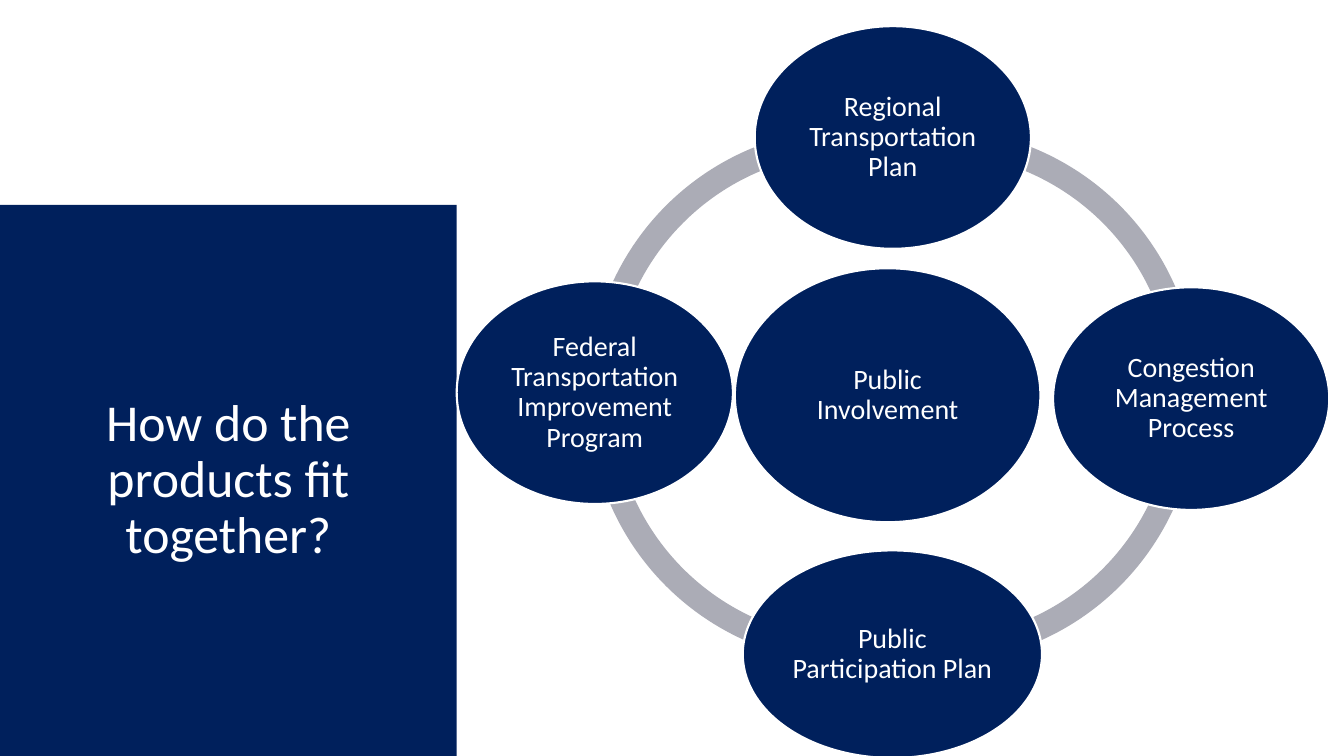
from pptx import Presentation
from pptx.dml.color import RGBColor
from pptx.enum.shapes import MSO_SHAPE
from pptx.enum.text import MSO_ANCHOR, MSO_AUTO_SIZE, PP_ALIGN
from pptx.util import Cm, Pt

TITLE = "How do the products fit together?"
TITLE_BOX = (0, 5.16, 11.51, 13.89)

OUTER = (6.96, 5.61)
PRODUCTS = [
    ("Public Involvement", (18.52, 6.76), (7.7, 6.4)),
    ("Regional Transportation Plan", (19.02, 0.66), OUTER),
    ("Congestion Management Process", (26.54, 7.24), OUTER),
    ("Public Participation Plan", (18.72, 13.87), (7.54, 5.23)),
    ("Federal Transportation Improvement Program", (11.51, 7.09), OUTER),
]

RING_SIZE = 13.34
RING_THICKNESS = 0.046
RING_ARCS = [
    (14.83, 3.23, 180.06, 278.85),
    (14.83, 3.38, 81.13, 181.43),
    (16.84, 3.38, 359.91, 98.86),
    (16.84, 3.23, 261.13, 1.28),
]
ANGLE_UNIT = 0.6

FONT = "Calibri"
NAVY = RGBColor(0x00, 0x20, 0x5C)
GREY = RGBColor(0xAB, 0xAC, 0xB6)
WHITE = RGBColor(0xFF, 0xFF, 0xFF)
ELLIPSE = MSO_SHAPE.OVAL
BLOCK_ARC = MSO_SHAPE.BLOCK_ARC
MIDDLE = MSO_ANCHOR.MIDDLE
CENTER = PP_ALIGN.CENTER
NO_FIT = MSO_AUTO_SIZE.NONE


def fill(sp, color):
    sp.fill.solid()
    sp.fill.fore_color.rgb = color


def write(sp, text, size, side, top):
    tf = sp.text_frame
    tf.text = text
    tf.word_wrap = True
    tf.auto_size = NO_FIT
    tf.vertical_anchor = MIDDLE
    tf.margin_left = tf.margin_right = Cm(side)
    tf.margin_top = tf.margin_bottom = Cm(top)
    p = tf.paragraphs[0]
    p.alignment = CENTER
    p.line_spacing = 0.9
    font = p.runs[0].font
    font.name = FONT
    font.size = Pt(size)
    font.color.rgb = WHITE


def add_arc(s, left, top, start, end):
    sp = s.shapes.add_shape(BLOCK_ARC, Cm(left), Cm(top), Cm(RING_SIZE), Cm(RING_SIZE))
    sp.adjustments[0] = start * ANGLE_UNIT
    sp.adjustments[1] = end * ANGLE_UNIT
    sp.adjustments[2] = RING_THICKNESS
    sp.shadow.inherit = False
    fill(sp, GREY)
    sp.line.fill.background()


def add_product(s, text, position, size):
    sp = s.shapes.add_shape(ELLIPSE, *map(Cm, position + size))
    sp.shadow.inherit = False
    fill(sp, NAVY)
    sp.line.color.rgb = WHITE
    sp.line.width = Pt(1.5)
    write(sp, text, 20, 0.08, 0.08)


def main():
    prs = Presentation()
    prs.slide_width = Cm(33.87)
    prs.slide_height = Cm(19.05)
    s = prs.slides.add_slide(prs.slide_layouts[5])

    title = s.shapes.title
    title.left, title.top, title.width, title.height = map(Cm, TITLE_BOX)
    fill(title, NAVY)
    write(title, TITLE, 37, 0.75, 0.13)

    for arc in RING_ARCS:
        add_arc(s, *arc)
    for product in PRODUCTS:
        add_product(s, *product)

    prs.save("out.pptx")


if __name__ == "__main__":
    main()
